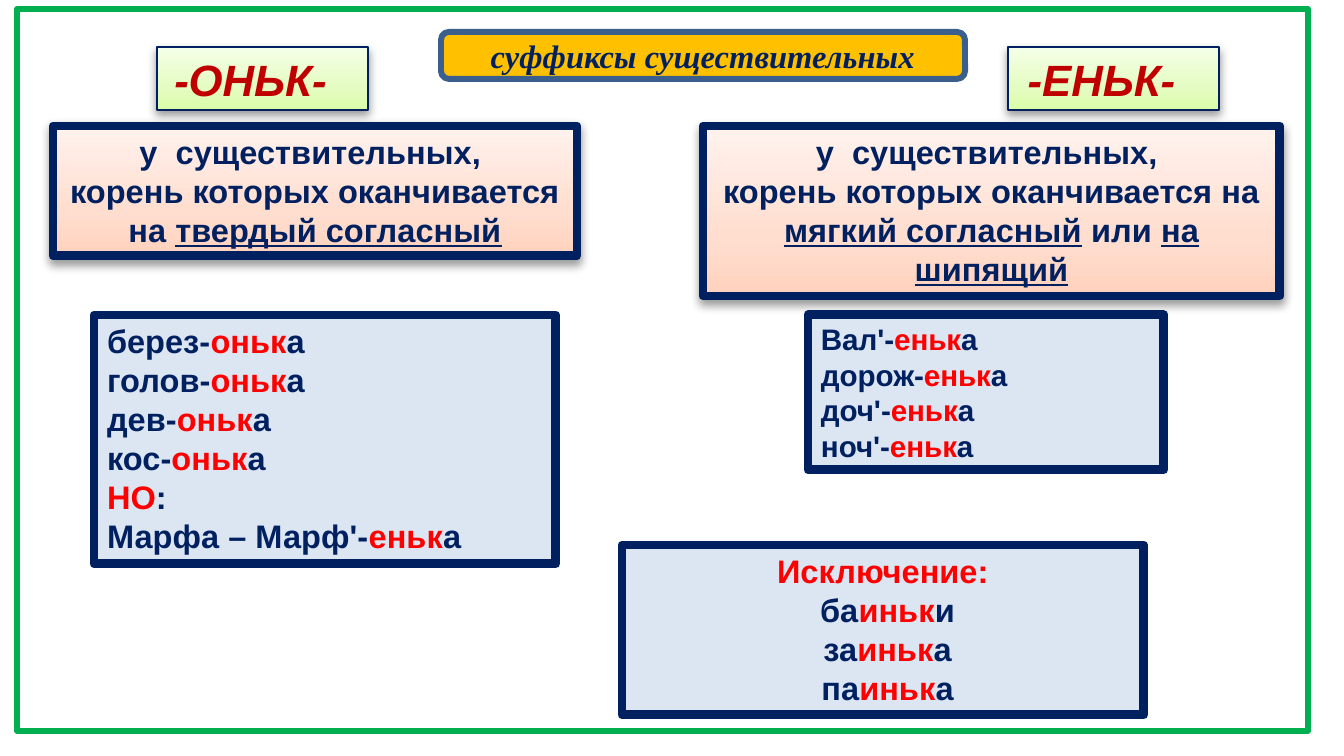
import pptx
import pptx.util
import pptx.dml.color
import pptx.enum.shapes
import pptx.enum.text
import pptx.oxml
import pptx.oxml.ns

PX = 914400 / 213
SHAPE = pptx.enum.shapes.MSO_SHAPE
ALIGN = pptx.enum.text.PP_ALIGN
ANCHOR = pptx.enum.text.MSO_ANCHOR
NS = pptx.oxml.ns.nsdecls("a")

COLORS = {
    "navy": "002060", "red": "FF0000", "crimson": "C00000", "amber": "FFC000",
    "steel": "3A5F8C", "pale": "DCE6F2", "green": "00B050",
}
GRADIENTS = {
    "lime": ("DAFDA7", "E4FCC2", "F5FFE7"),
    "peach": ("FFD2BD", "FFDED0", "FFF2ED"),
}


def rgb(name):
    return pptx.dml.color.RGBColor.from_string(COLORS[name])


def add_box(box, fill, line, width, kind=SHAPE.RECTANGLE):
    """Add an outlined box; a gradient fill also brings a soft shadow."""
    sp = s.shapes.add_shape(kind, *[round(v * PX) for v in box])
    sp.shadow.inherit = False
    sp.line.color.rgb = rgb(line)
    sp.line.width = pptx.util.Pt(width)
    if fill is None:
        sp.fill.background()
    elif fill in COLORS:
        sp.fill.solid()
        sp.fill.fore_color.rgb = rgb(fill)
    else:
        stops = "".join(
            f'<a:gs pos="{pos}"><a:srgbClr val="{c}"/></a:gs>'
            for pos, c in zip((0, 35000, 100000), GRADIENTS[fill]))
        sp._element.spPr.find(pptx.oxml.ns.qn("a:prstGeom")).addnext(pptx.oxml.parse_xml(
            f'<a:gradFill {NS} rotWithShape="1"><a:gsLst>{stops}</a:gsLst>'
            '<a:lin ang="16200000" scaled="0"/></a:gradFill>'))
        effects = sp._element.spPr.find(pptx.oxml.ns.qn("a:effectLst"))
        effects.append(pptx.oxml.parse_xml(
            f'<a:outerShdw {NS} blurRad="39400" dist="20300" dir="5400000" rotWithShape="0">'
            '<a:srgbClr val="000000"><a:alpha val="38000"/></a:srgbClr></a:outerShdw>'))
    return sp


def write(sp, lines, size, color="navy", font="Arial", italic=False, align=ALIGN.CENTER,
          anchor=ANCHOR.TOP, accent="red", right=13):
    """Write one paragraph per line; every second part between bars is accented."""
    tf = sp.text_frame
    tf.word_wrap = True
    tf.vertical_anchor = anchor
    tf.margin_left, tf.margin_right = round(13 * PX), round(right * PX)
    tf.margin_top = tf.margin_bottom = round(6 * PX)
    for i, line in enumerate(lines):
        p = tf.add_paragraph() if i else tf.paragraphs[0]
        p.alignment = align
        for j, part in enumerate(line.split("|")):
            if not part:
                continue
            r = p.add_run()
            r.text = part
            r.font.name = font
            r.font.size = pptx.util.Pt(size)
            r.font.bold = True
            r.font.italic = italic
            marked = j % 2 == 1
            r.font.underline = marked and accent == "underline"
            r.font.color.rgb = rgb("red" if marked and accent == "red" else color)


prs = pptx.Presentation()
prs.slide_width, prs.slide_height = round(1344 * PX), round(756 * PX)
s = prs.slides.add_slide(prs.slide_layouts[6])

# Title
title = add_box((441, 32, 524, 47), "amber", "steel", 2, SHAPE.ROUNDED_RECTANGLE)
write(title, ["суффиксы существительных"], 11, font="Times New Roman", italic=True,
      anchor=ANCHOR.MIDDLE)

# Suffix labels
for left, suffix in ((157, "-ОНЬК-"), (1008, "-ЕНЬК-")):
    label = add_box((left, 47, 211, 63), "lime", "navy", 0.75)
    write(label, [suffix], 14.8, color="crimson", italic=True, anchor=ANCHOR.MIDDLE, right=37)

# Rules
rules = [
    ((53, 126, 524, 130), ["у  существительных, ", "корень которых оканчивается ",
                           "на |твердый согласный|"]),
    ((703, 126, 577, 170), ["у  существительных, ",
                            "корень которых оканчивается на |мягкий согласный| или |на шипящий|"]),
]
for box, lines in rules:
    write(add_box(box, "peach", "navy", 3), lines, 11, accent="underline")

# Examples and exceptions
examples = [
    ((94, 315, 462, 249), 11, ALIGN.LEFT,
     [f"{stem}-|оньк|а" for stem in ("берез", "голов", "дев", "кос")]
     + ["|НО|:", "Марфа – Марф'-|еньк|а"]),
    ((808, 315, 356, 155), 10, ALIGN.LEFT,
     [f"{stem}-|еньк|а" for stem in ("Вал'", "дорож", "доч'", "ноч'")]),
    ((622, 545, 522, 170), 11, ALIGN.CENTER,
     ["|Исключение:|", " ба|иньк|и", " за|иньк|а", " па|иньк|а"]),
]
for box, size, align, lines in examples:
    write(add_box(box, "pale", "navy", 3), lines, size, align=align)

# Slide frame
add_box((17, 9, 1291, 722), None, "green", 2)

prs.save("out.pptx")
